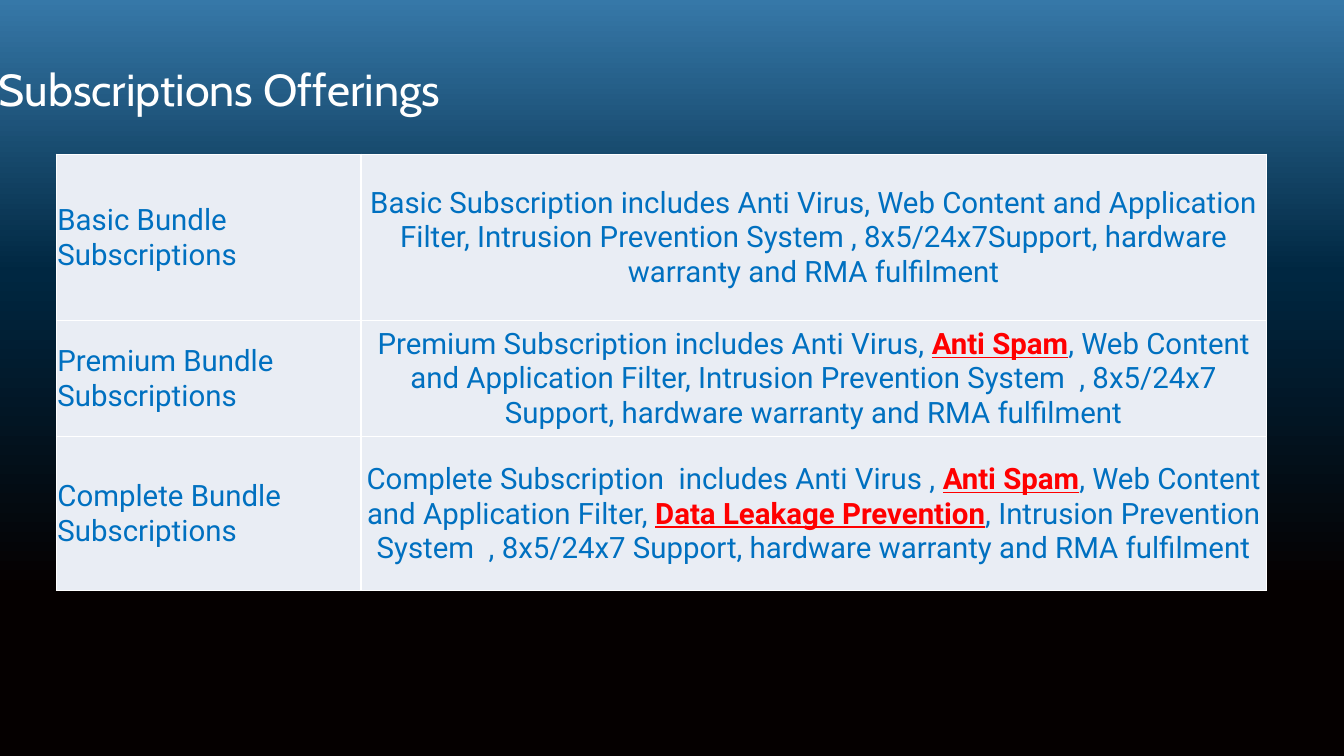
import copy

import pptx
import pptx.dml.color
import pptx.enum.text
import pptx.oxml
import pptx.oxml.ns
import pptx.util

RGBColor = pptx.dml.color.RGBColor
Inches = pptx.util.Inches
MIDDLE = pptx.enum.text.MSO_ANCHOR.MIDDLE
CENTER = pptx.enum.text.PP_ALIGN.CENTER
LEFT = pptx.enum.text.PP_ALIGN.LEFT

WHITE = RGBColor(0xFF, 0xFF, 0xFF)
CELL_FILL = RGBColor(0xE9, 0xED, 0xF4)
BODY_BLUE = RGBColor(0x00, 0x70, 0xC0)
HIGHLIGHT_RED = RGBColor(0xFF, 0x00, 0x00)
SKY = [
    (0, RGBColor(0x36, 0x78, 0xA8)),
    (0.36, RGBColor(0x00, 0x27, 0x41)),
    (0.78, RGBColor(0x05, 0x00, 0x00)),
]

COLUMN_WIDTHS = [3.02, 8.98]
ROW_HEIGHTS = [1.65, 1.15, 1.53]
# Text between asterisks is highlighted.
BUNDLES = [
    ("Basic Bundle Subscriptions",
     "Basic Subscription includes Anti Virus, Web Content and Application "
     "Filter, Intrusion Prevention System , 8x5/24x7Support, hardware "
     "warranty and RMA fulfilment"),
    ("Premium Bundle  Subscriptions",
     "Premium Subscription includes Anti Virus, *Anti Spam*, Web Content "
     "and Application Filter, Intrusion Prevention System  , 8x5/24x7 "
     "Support, hardware warranty and RMA fulfilment"),
    ("Complete Bundle Subscriptions",
     "Complete Subscription  includes Anti Virus , *Anti Spam*, Web Content "
     "and Application Filter, *Data Leakage Prevention*, Intrusion Prevention "
     "System  , 8x5/24x7 Support, hardware warranty and RMA fulfilment"),
]


def paint_background(slide):
    fill = slide.background.fill
    fill.gradient()
    fill.gradient_angle = 270
    stop_list = slide.element.xpath(".//p:bg//a:gsLst")[0]
    stop_list.append(copy.deepcopy(stop_list[-1]))
    for stop, (position, color) in zip(fill.gradient_stops, SKY):
        stop.position = position
        stop.color.rgb = color


def add_title(slide, left, top, width, height):
    title = slide.shapes.add_textbox(*map(Inches, (left, top, width, height)))
    frame = title.text_frame
    frame.word_wrap = True
    frame.vertical_anchor = MIDDLE
    heading = frame.paragraphs[0]
    heading.text = "Subscriptions Offerings"
    heading.font.name = "Cabin"
    heading.font.size = pptx.util.Pt(32)
    heading.font.color.rgb = WHITE


def outline_cell(cell):
    """Put a white 1 pt line on all four sides, ahead of the cell's fill."""
    properties = cell._tc.get_or_add_tcPr()
    for index, side in enumerate(("lnL", "lnR", "lnT", "lnB")):
        properties.insert(index, pptx.oxml.parse_xml(
            f'<a:{side} {pptx.oxml.ns.nsdecls("a")} w="12700"><a:solidFill>'
            f'<a:srgbClr val="{WHITE}"/></a:solidFill></a:{side}>'))


def fill_cell(cell, text, alignment):
    cell.fill.solid()
    cell.fill.fore_color.rgb = CELL_FILL
    outline_cell(cell)
    cell.vertical_anchor = MIDDLE
    cell.margin_left = cell.margin_right = cell.margin_top = Inches(0.01)
    cell.margin_bottom = 0
    paragraph = cell.text_frame.paragraphs[0]
    paragraph.alignment = alignment
    paragraph.font.name = "Roboto"
    paragraph.font.size = pptx.util.Pt(21)
    for index, part in enumerate(text.split("*")):
        highlighted = index % 2 == 1
        run = paragraph.add_run()
        run.text = part
        run.font.color.rgb = HIGHLIGHT_RED if highlighted else BODY_BLUE
        if highlighted:
            run.font.bold = run.font.underline = True


def add_bundle_table(slide, left, top):
    table = slide.shapes.add_table(
        len(ROW_HEIGHTS), len(COLUMN_WIDTHS), Inches(left), Inches(top),
        Inches(sum(COLUMN_WIDTHS)), Inches(sum(ROW_HEIGHTS))).table
    table.first_row = table.horz_banding = False
    for column, width in zip(table.columns, COLUMN_WIDTHS):
        column.width = Inches(width)
    for row, height, bundle in zip(table.rows, ROW_HEIGHTS, BUNDLES):
        row.height = Inches(height)
        for cell, text, alignment in zip(row.cells, bundle, (LEFT, CENTER)):
            fill_cell(cell, text, alignment)


def main():
    presentation = pptx.Presentation()
    presentation.slide_width = Inches(13.33)
    presentation.slide_height = Inches(7.5)
    slide = presentation.slides.add_slide(presentation.slide_layouts[6])
    paint_background(slide)
    add_title(slide, -0.11, 0.53, 11.44, 0.69)
    add_bundle_table(slide, 0.56, 1.53)
    presentation.save("out.pptx")


if __name__ == "__main__":
    main()
